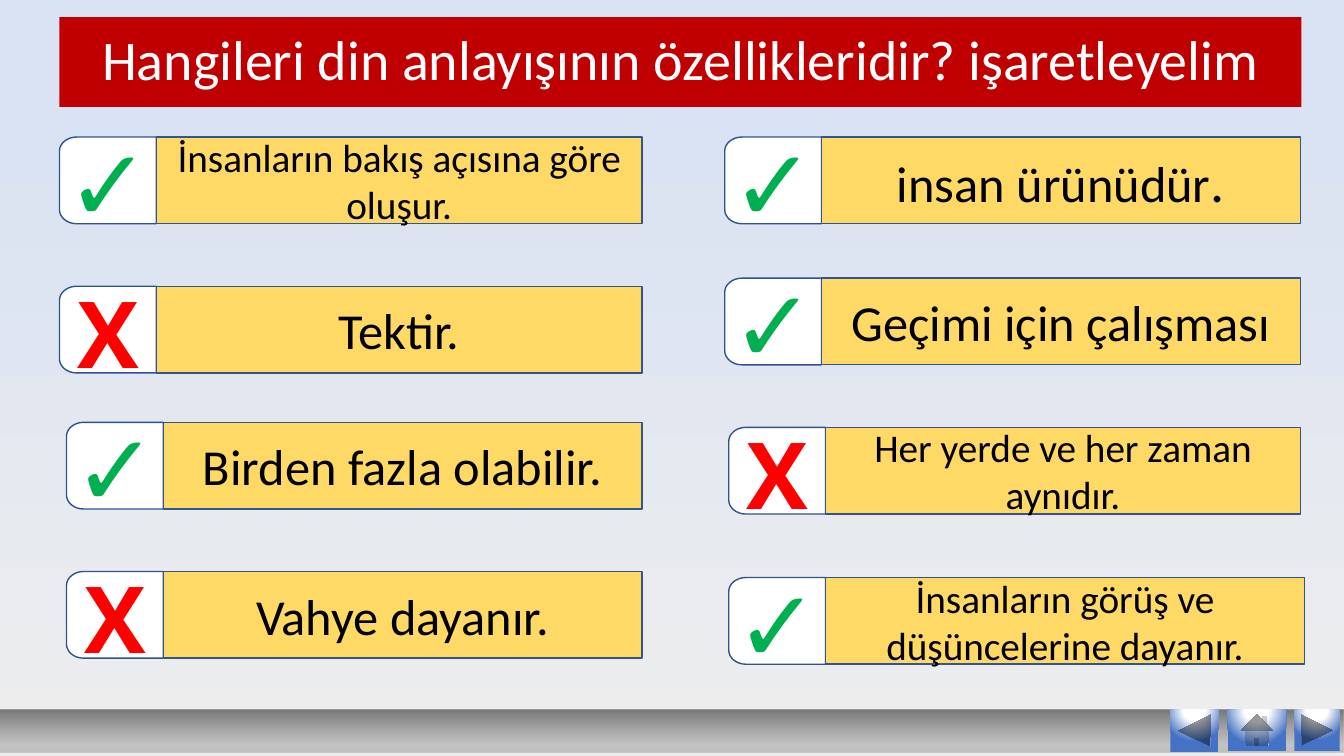
from dataclasses import dataclass

from pptx import Presentation
from pptx.dml.color import RGBColor
from pptx.enum.shapes import MSO_SHAPE
from pptx.enum.text import MSO_ANCHOR, MSO_AUTO_SIZE, PP_ALIGN
from pptx.oxml import parse_xml
from pptx.oxml.ns import nsdecls, qn
from pptx.util import Inches, Pt

RECTANGLE = MSO_SHAPE.RECTANGLE
BACK = MSO_SHAPE.ACTION_BUTTON_BACK_OR_PREVIOUS
FORWARD = MSO_SHAPE.ACTION_BUTTON_FORWARD_OR_NEXT
HOME = MSO_SHAPE.ACTION_BUTTON_HOME
CENTER = PP_ALIGN.CENTER
MIDDLE, TOP = MSO_ANCHOR.MIDDLE, MSO_ANCHOR.TOP
FIT_SHAPE = MSO_AUTO_SIZE.SHAPE_TO_FIT_TEXT


@dataclass(frozen=True)
class Theme:
    title_fill: str = "C00000"
    bar_fill: str = "FFD966"
    bar_line: str = "325491"
    tab_fill: str = "FFFFFF"
    tab_line: str = "2F528F"
    title_text: str = "FFFFFF"
    bar_text: str = "000000"
    yes: str = "00B050"
    no: str = "FF0000"
    font: str = "Calibri"
    title_size: int = 40
    large: int = 36
    small: int = 28
    line_width: int = 1
    # Gradient stops: position %, colour, opacity %
    background: tuple = ((0, "EDEDED", 100), (84, "DAE3F3", 100))
    footer: tuple = ((0, "C0C0C0", 100), (17, "B3B3B3", 70), (100, "777777", 100))
    button: tuple = ((0, "FFFFFF", 100), (35, "FFFFFF", 100), (100, "4472C4", 100))


THEME = Theme()
UPWARD = '<a:lin ang="16200000" scaled="0"/>'
GLOW_FROM_TOP = ('<a:path path="circle">'
                 '<a:fillToRect l="50000" t="-80000" r="50000" b="180000"/></a:path>')


@dataclass(frozen=True)
class Box:
    left: float
    top: float
    width: float
    height: float

    def lengths(self) -> tuple:
        return tuple(Inches(v) for v in (self.left, self.top, self.width, self.height))


@dataclass(frozen=True)
class Mark:
    symbol: str
    font: str
    size: int
    color: str
    offset: Box  # place relative to the tab's top left corner
    wrap: bool


@dataclass(frozen=True)
class Statement:
    left: float
    top: float
    right: float
    mark: Mark
    lines: tuple
    size: int = THEME.large
    ending: str = ""


@dataclass(frozen=True)
class Button:
    kind: int
    box: Box


YES = Mark("✓", "TeX Gyre Bonum", 72, THEME.yes, Box(-0.23, -0.21, 1.43, 1.31), True)
NO = Mark("X", "Open Sans", 66, THEME.no, Box(0.07, -0.15, 0.82, 1.21), False)

SLIDE_WIDTH, SLIDE_HEIGHT = 40 / 3, 7.5
ROW_HEIGHT, TAB_WIDTH = 0.86, 0.96
CORNER_X, CORNER_Y = 0.17, 0.14
ARC_PULL = 0.55  # share of the way from an arc's end to its corner

STATEMENTS = (
    Statement(0.59, 1.36, 6.37, YES, ("İnsanların bakış açısına göre oluşur.",), THEME.small),
    Statement(0.59, 2.84, 6.37, NO, ("Tektir.",)),
    Statement(0.66, 4.19, 6.37, YES, ("Birden fazla olabilir.",)),
    Statement(0.66, 5.67, 6.37, NO, ("Vahye dayanır.",)),
    Statement(7.19, 1.36, 12.9, YES, ("insan ürünüdür",), ending="."),
    Statement(7.23, 4.24, 12.9, NO, ("Her yerde ve her zaman aynıdır.",), THEME.small),
    Statement(7.19, 2.76, 12.9, YES, ("Geçimi için çalışması",)),
    Statement(7.23, 5.73, 12.94, YES,
              ("İnsanların görüş ve", "düşüncelerine dayanır."), THEME.small),
)
BUTTONS = (
    Button(BACK, Box(11.61, 7.04, 0.48, 0.42)),
    Button(FORWARD, Box(12.84, 7.04, 0.45, 0.41)),
    Button(HOME, Box(12.18, 7.04, 0.58, 0.41)),
)


def apply_gradient(properties, stops: tuple, direction: str) -> None:
    """Swap the solid fill inside a properties element for a gradient."""
    stop_xml = ""
    for position, color, opacity in stops:
        alpha = f'<a:alpha val="{opacity * 1000}"/>' if opacity < 100 else ""
        stop_xml += (f'<a:gs pos="{position * 1000}">'
                     f'<a:srgbClr val="{color}">{alpha}</a:srgbClr></a:gs>')
    gradient = parse_xml(f'<a:gradFill {nsdecls("a")} rotWithShape="1">'
                         f'<a:gsLst>{stop_xml}</a:gsLst>{direction}</a:gradFill>')
    properties.replace(properties.find(qn("a:solidFill")), gradient)


def paint(shape, fill: str, line: str = "") -> None:
    shape.shadow.inherit = False
    shape.fill.solid()
    shape.fill.fore_color.rgb = RGBColor.from_string(fill)
    if line:
        shape.line.color.rgb = RGBColor.from_string(line)
        shape.line.width = Pt(THEME.line_width)
    else:
        shape.line.fill.background()


def add_run(paragraph, text: str, color: str, **formats) -> None:
    run = paragraph.add_run()
    run.text = text
    run.font.color.rgb = RGBColor.from_string(color)
    for attribute, value in formats.items():
        setattr(run.font, attribute, value)


def write_lines(frame, lines: tuple, color: str, anchor, **formats):
    """Write centred paragraphs and return the last one."""
    frame.vertical_anchor = anchor
    for index, line in enumerate(lines):
        paragraph = frame.add_paragraph() if index else frame.paragraphs[0]
        paragraph.alignment = CENTER
        add_run(paragraph, line, color, **formats)
    return paragraph


def add_gradient_shape(shapes, kind: int, box: Box, stops: tuple, direction: str) -> None:
    shape = shapes.add_shape(kind, *box.lengths())
    paint(shape, stops[0][1])
    apply_gradient(shape.element.spPr, stops, direction)


def round_corner(segment, start: tuple, corner: tuple, end: tuple) -> None:
    """Turn a straight outline segment into a quarter arc around a corner."""
    pulled = [tuple(round(a + (c - a) * ARC_PULL) for a, c in zip(tip, corner))
              for tip in (start, end)]
    points = "".join(f'<a:pt x="{x}" y="{y}"/>' for x, y in (*pulled, end))
    arc = parse_xml(f'<a:cubicBezTo {nsdecls("a")}>{points}</a:cubicBezTo>')
    segment.getparent().replace(segment, arc)


def add_tab(shapes, left: float, top: float) -> None:
    """Draw the white tab, rounded at its two left corners."""
    width, height = Inches(TAB_WIDTH), Inches(ROW_HEIGHT)
    across, down = Inches(CORNER_X), Inches(CORNER_Y)
    outline = [(width, 0), (width, height), (across, height),
               (0, height - down), (0, down), (across, 0)]
    builder = shapes.build_freeform(*outline[0])
    builder.add_line_segments(outline[1:], close=True)
    tab = builder.convert_to_shape(Inches(left), Inches(top))
    segments = list(tab.element.iter(qn("a:lnTo")))
    round_corner(segments[2], outline[2], (0, height), outline[3])
    round_corner(segments[4], outline[4], (0, 0), outline[5])
    paint(tab, THEME.tab_fill, THEME.tab_line)


def add_mark(shapes, mark: Mark, left: float, top: float) -> None:
    place = mark.offset
    box = Box(left + place.left, top + place.top, place.width, place.height)
    frame = shapes.add_textbox(*box.lengths()).text_frame
    frame.word_wrap = mark.wrap
    frame.auto_size = FIT_SHAPE
    write_lines(frame, (mark.symbol,), mark.color, TOP,
                name=mark.font, size=Pt(mark.size), bold=True)


def add_statement(shapes, item: Statement) -> None:
    row = shapes.add_group_shape().shapes
    add_tab(row, item.left, item.top)
    bar_left = item.left + TAB_WIDTH
    box = Box(bar_left, item.top, item.right - bar_left, ROW_HEIGHT)
    bar = row.add_shape(RECTANGLE, *box.lengths())
    paint(bar, THEME.bar_fill, THEME.bar_line)
    last = write_lines(bar.text_frame, item.lines, THEME.bar_text, MIDDLE,
                       name=THEME.font, size=Pt(item.size))
    if item.ending:
        add_run(last, item.ending, THEME.bar_text, name=THEME.font, size=Pt(THEME.title_size))
    add_mark(shapes, item.mark, item.left, item.top)


def add_title(shapes) -> None:
    title = shapes.add_shape(RECTANGLE, *Box(0.59, 0.17, 12.32, 0.89).lengths())
    paint(title, THEME.title_fill)
    heading = write_lines(
        title.text_frame, ("Hangileri din anlayışının özellikleridir? işaretleyelim",),
        THEME.title_text, MIDDLE, name=THEME.font, size=Pt(THEME.title_size))
    heading.line_spacing = 0.9


def main() -> None:
    deck = Presentation()
    deck.slide_width, deck.slide_height = Inches(SLIDE_WIDTH), Inches(SLIDE_HEIGHT)
    slide = deck.slides.add_slide(deck.slide_layouts[6])
    slide.background.fill.solid()
    apply_gradient(slide.element.find(".//" + qn("p:bgPr")), THEME.background, UPWARD)
    add_title(slide.shapes)
    for item in STATEMENTS:
        add_statement(slide.shapes, item)
    add_gradient_shape(slide.shapes, RECTANGLE, Box(0, 7.04, SLIDE_WIDTH, 0.42),
                       THEME.footer, UPWARD)
    for button in BUTTONS:
        add_gradient_shape(slide.shapes, button.kind, button.box, THEME.button, GLOW_FROM_TOP)
    deck.save("out.pptx")


if __name__ == "__main__":
    main()
